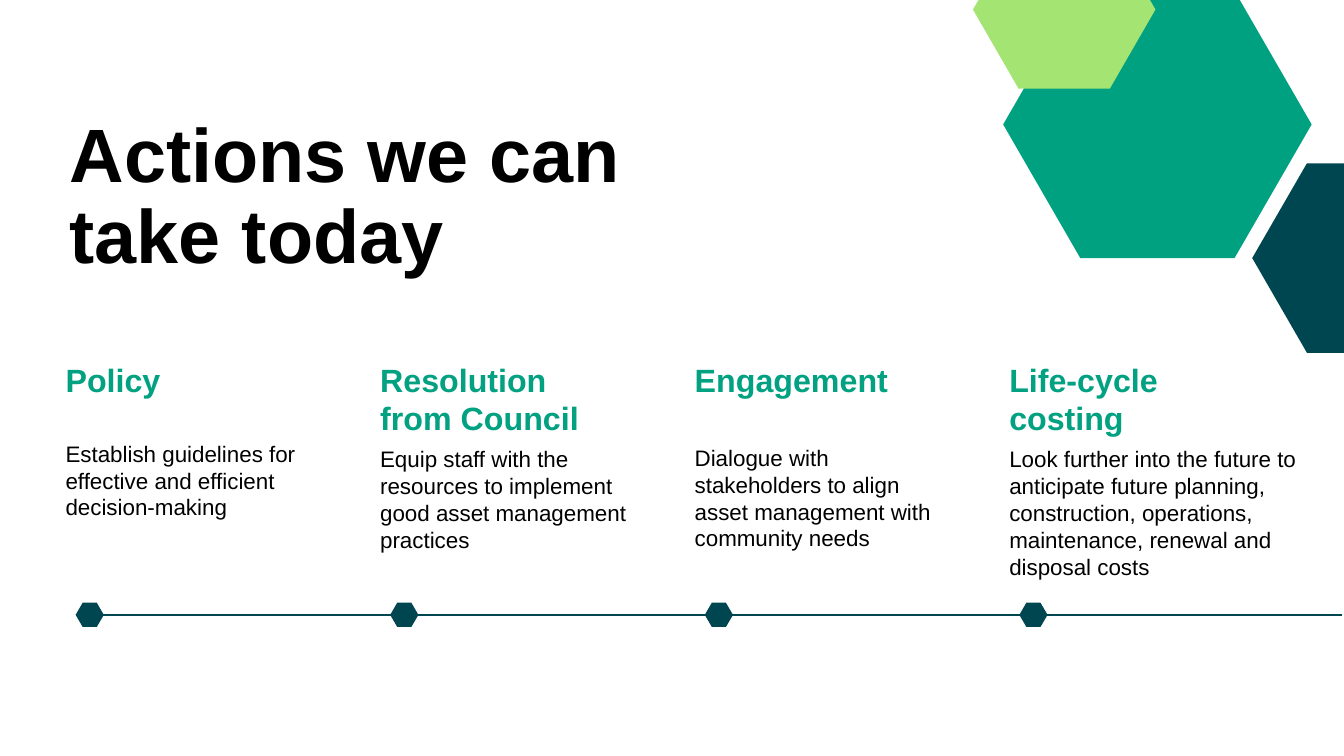
from lxml import etree
from pptx import Presentation
from pptx.dml.color import RGBColor
from pptx.enum.shapes import MSO_CONNECTOR
from pptx.enum.text import MSO_ANCHOR, MSO_AUTO_SIZE, PP_ALIGN
from pptx.oxml.ns import qn
from pptx.util import Inches, Pt

COLORS = {"navy": "004651", "green": "00A181", "heading": "01A181",
          "lime": "A4E473", "black": "000000"}

# left, top, width, height, colour
CORNER_HEXAGONS = [
    (12.42, 1.62, 2.17, 1.88, "navy"),
    (9.95, -0.09, 3.06, 2.65, "green"),
    (9.65, -0.69, 1.81, 1.57, "lime"),
]

# heading, description, width, height, space after each paragraph
ACTIONS = [
    ("Policy",
     "Establish guidelines for effective and efficient decision-making",
     3.02, 1.62, 3),
    ("Resolution \nfrom Council",
     "Equip staff with the resources to implement good asset management practices",
     2.68, 1.94, 6),
    ("Engagement",
     "Dialogue with stakeholders to align asset management with community needs",
     2.49, 1.94, 6),
    ("Life-cycle \ncosting",
     "Look further into the future to anticipate future planning, construction, "
     "operations, maintenance, renewal and disposal costs",
     2.85, 2.2, 6),
]
COLUMN_LEFT, COLUMN_TOP, COLUMN_PITCH = 0.65, 3.57, 3.12
MARKER_INSET, MARKER_TOP = 0.1, 5.98
HEADING_LINE = 26.5  # points


def color(name):
    return RGBColor.from_string(COLORS[name])


def set_up_frame(frame, anchor):
    settings = {"margin_left": 0, "margin_top": 0, "margin_right": 0,
                "margin_bottom": 0, "word_wrap": True,
                "auto_size": MSO_AUTO_SIZE.NONE, "vertical_anchor": anchor}
    for name, value in settings.items():
        setattr(frame, name, value)


def write(para, text, size, color_name, bold):
    para.text = text
    para.alignment = PP_ALIGN.LEFT
    for span in para.runs:
        for name, value in {"name": "Arial", "size": Pt(size), "bold": bold}.items():
            setattr(span.font, name, value)
        span.font.color.rgb = color(color_name)


def add_title(page, text):
    title = page.shapes.title
    title.left, title.top = Inches(0.69), Inches(1.14)
    title.width, title.height = Inches(6.19), Inches(1.64)
    set_up_frame(title.text_frame, MSO_ANCHOR.BOTTOM)
    para = title.text_frame.paragraphs[0]
    write(para, text, 54, "black", True)
    para.line_spacing = 0.9


def add_hexagon(page, left, top, width, height, color_name):
    corners = [(1, 0.5), (0.75, 1), (0.25, 1), (0, 0.5), (0.25, 0), (0.75, 0)]
    points = [(Inches(left + x * width), Inches(top + y * height)) for x, y in corners]
    builder = page.shapes.build_freeform(*points[0])
    builder.add_line_segments(points[1:], close=True)
    hexagon = builder.convert_to_shape()
    hexagon.shadow.inherit = False
    hexagon.fill.solid()
    hexagon.fill.fore_color.rgb = color(color_name)
    hexagon.line.fill.background()


def add_timeline(page):
    line = page.shapes.add_connector(MSO_CONNECTOR.STRAIGHT, Inches(0.92), Inches(6.1),
                                     Inches(13.31), Inches(6.1))
    line.line.color.rgb = color("navy")
    line.line.width = Pt(1.5)
    etree.SubElement(line._element.spPr, qn("a:effectLst"))


def add_action(page, left, heading, description, width, height, space_after):
    box = page.shapes.add_textbox(Inches(left), Inches(COLUMN_TOP),
                                  Inches(width), Inches(height))
    frame = box.text_frame
    set_up_frame(frame, MSO_ANCHOR.TOP)
    heading_para = frame.paragraphs[0]
    write(heading_para, heading, 23, "heading", True)
    # One-line headings keep the height of two lines
    missing_lines = 1 - heading.count("\n")
    heading_para.space_after = Pt(space_after + missing_lines * HEADING_LINE)
    description_para = frame.add_paragraph()
    write(description_para, description, 16, "black", False)
    description_para.space_after = Pt(space_after)


def main():
    deck = Presentation()
    deck.slide_width, deck.slide_height = Inches(13.33), Inches(7.5)
    page = deck.slides.add_slide(deck.slide_layouts.get_by_name("Title Only"))
    for hexagon in CORNER_HEXAGONS:
        add_hexagon(page, *hexagon)
    add_title(page, "Actions we can take today")
    add_timeline(page)
    for index, action in enumerate(ACTIONS):
        left = COLUMN_LEFT + index * COLUMN_PITCH
        add_hexagon(page, left + MARKER_INSET, MARKER_TOP, 0.28, 0.24, "navy")
        add_action(page, left, *action)
    deck.save("out.pptx")


if __name__ == "__main__":
    main()
